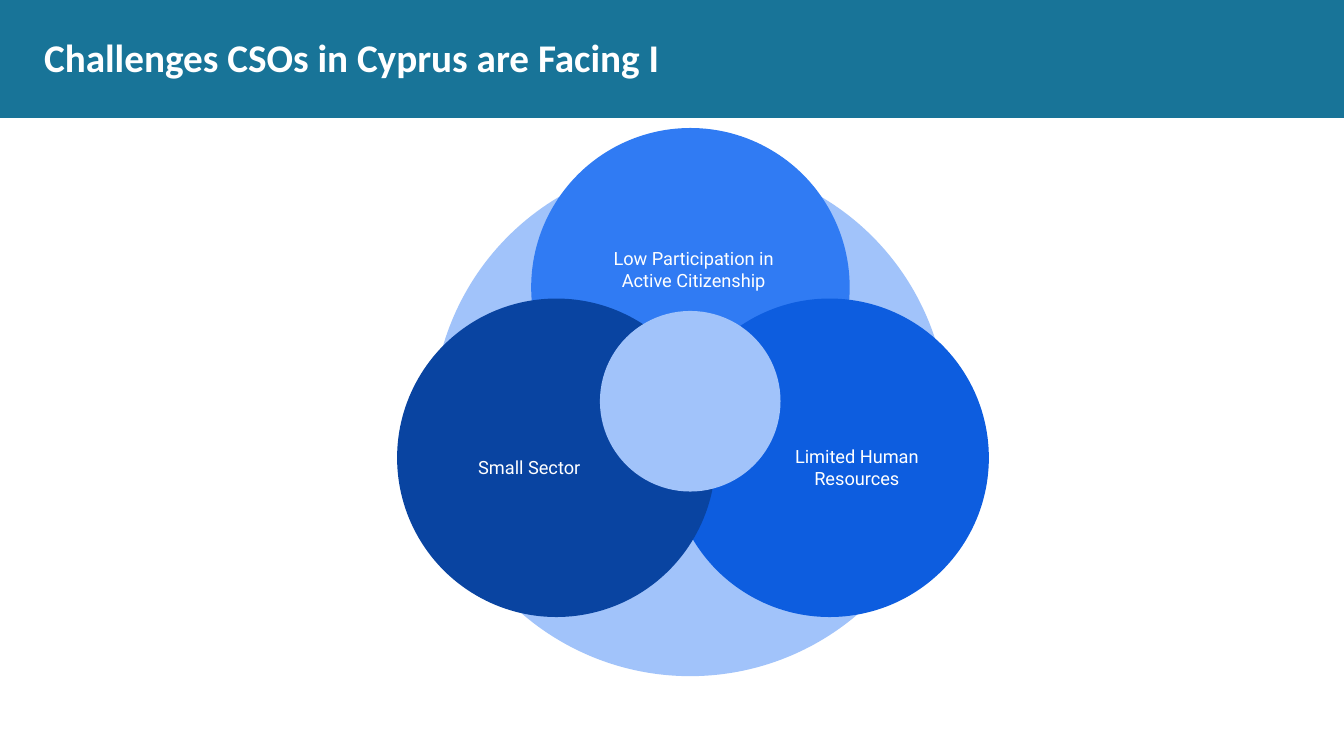
from pptx import Presentation
from pptx.dml.color import RGBColor
from pptx.enum import shapes, text
from pptx.util import Pt

WHITE = "FFFFFF"
TEAL = "187498"
PALE_BLUE = "A1C3FA"

CIRCLE_SIZE = 227.5
LABEL_WIDTH, LABEL_HEIGHT = 157, 73.4

CHALLENGES = [
    ("Low Participation in Active Citizenship", "307BF3", (493.2, 205.2), (495.4, 192.2)),
    ("Limited Human Resources", "0D5DDF", (592.6, 327), (612, 334)),
    ("Small Sector", "0944A1", (397.4, 327), (378, 334)),
]


def color(value):
    return RGBColor.from_string(value)


def add_filled(page, kind, left, top, width, height, fill):
    shape = page.shapes.add_shape(kind, Pt(left), Pt(top), Pt(width), Pt(height))
    shape.shadow.inherit = False
    shape.fill.solid()
    shape.fill.fore_color.rgb = color(fill)
    shape.line.fill.background()
    return shape


def add_circle(page, center, size, fill):
    x, y = center
    return add_filled(page, shapes.MSO_SHAPE.OVAL, x - size / 2, y - size / 2, size, size, fill)


def add_text(page, words, left, top, width, height, font, size, align, bold=False, inset=0):
    box = page.shapes.add_textbox(Pt(left), Pt(top), Pt(width), Pt(height))
    frame = box.text_frame
    frame.word_wrap = True
    frame.vertical_anchor = text.MSO_ANCHOR.MIDDLE
    frame.margin_left = frame.margin_right = Pt(inset)
    frame.margin_top = frame.margin_bottom = Pt(inset)
    para = frame.paragraphs[0]
    para.alignment = align
    span = para.add_run()
    span.text = words
    span.font.name = font
    span.font.size = Pt(size)
    span.font.bold = bold
    span.font.color.rgb = color(WHITE)
    return box


def add_label(page, words, center):
    x, y = center
    return add_text(page, words, x - LABEL_WIDTH / 2, y - LABEL_HEIGHT / 2,
                    LABEL_WIDTH, LABEL_HEIGHT, "Roboto", 13,
                    text.PP_ALIGN.CENTER, inset=9.6)


def main():
    deck = Presentation()
    deck.slide_width, deck.slide_height = Pt(960), Pt(540)
    page = deck.slides.add_slide(deck.slide_layouts[6])

    add_filled(page, shapes.MSO_SHAPE.RECTANGLE, 0, 0, 960, 84.2, TEAL)
    add_text(page, "Challenges CSOs in Cyprus are Facing I", 31.5, 13.7, 897, 53.3,
             "Calibri", 28, text.PP_ALIGN.LEFT, bold=True)

    add_circle(page, (493, 299), 368, PALE_BLUE)
    for words, fill, circle_center, label_center in CHALLENGES:
        add_circle(page, circle_center, CIRCLE_SIZE, fill)
        add_label(page, words, label_center)
    add_circle(page, (493, 286.6), 129, PALE_BLUE)

    deck.save("out.pptx")


if __name__ == "__main__":
    main()
